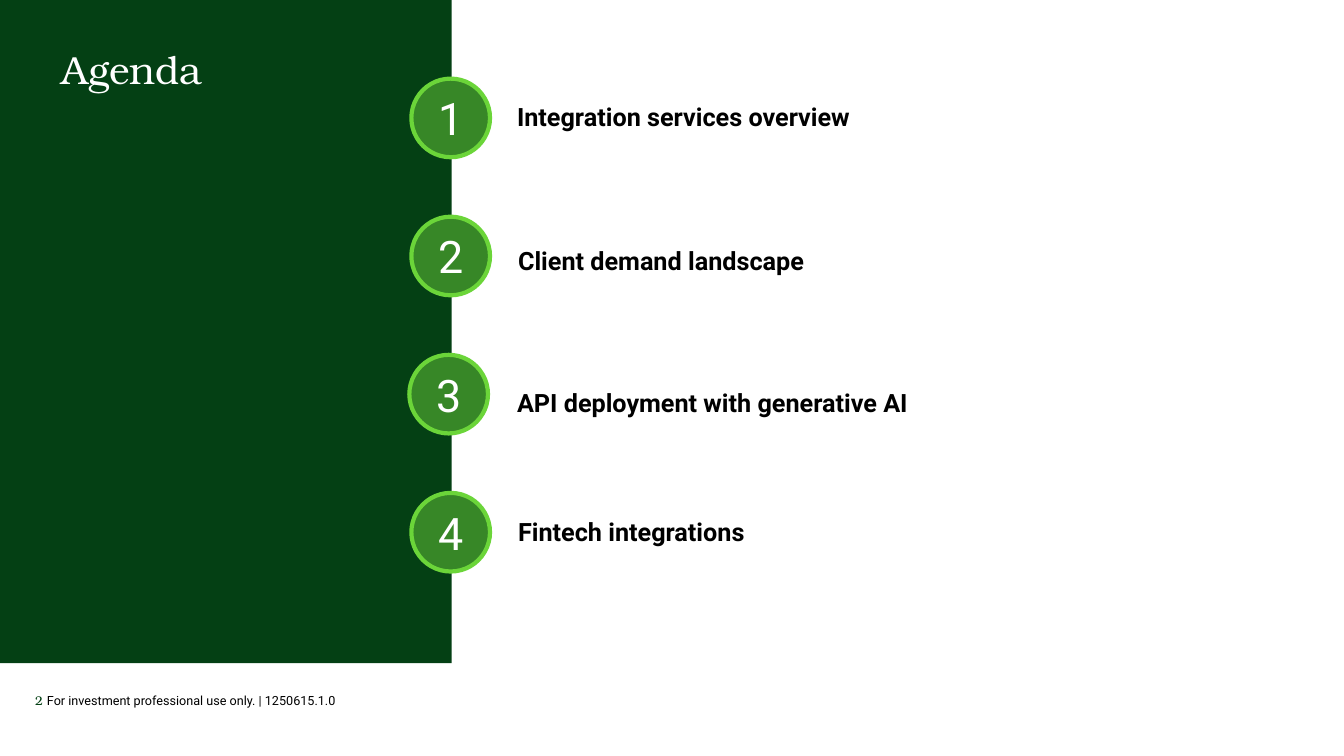
import pptx
import pptx.util
import pptx.dml.color
import pptx.enum.shapes
import pptx.enum.text

Inches = pptx.util.Inches
ALIGN = pptx.enum.text.PP_ALIGN
ANCHOR = pptx.enum.text.MSO_ANCHOR
SHAPE = pptx.enum.shapes.MSO_SHAPE

TITLE = "Agenda"
AGENDA = [
    {"topic": "Integration services overview", "circle_left": 4.08, "topic_left": 5.03, "topic_top": 0.96},
    {"topic": "Client demand landscape", "circle_left": 4.08, "topic_left": 5.04, "topic_top": 2.38},
    {"topic": "API deployment with generative AI", "circle_left": 4.06, "topic_left": 5.03, "topic_top": 3.79},
    {"topic": "Fintech integrations", "circle_left": 4.08, "topic_left": 5.04, "topic_top": 5.07},
]
PAGE_NUMBER = "2 "
DISCLAIMER = "For investment professional use only. | 1250615.1.0"

COLORS = {
    "panel": "044014",
    "circle": "378727",
    "ring": "6BD539",
    "light": "FFFFFF",
    "dark": "000000",
}
SERIF, SANS = "TeX Gyre Bonum", "Roboto"
FIRST_CIRCLE_TOP, CIRCLE_PITCH, CIRCLE_SIZE = 0.78, 1.37, 0.78


def rgb(name):
    return pptx.dml.color.RGBColor.from_string(COLORS[name])


def write(paragraph, text, *, size, font=SANS, color="dark", bold=False, align=ALIGN.LEFT):
    paragraph.alignment = align
    run = paragraph.add_run()
    run.text = text
    run.font.size = pptx.util.Pt(size)
    run.font.name = font
    run.font.bold = bold
    run.font.color.rgb = rgb(color)


def add_box(slide, left, top, width, height):
    frame = slide.shapes.add_textbox(*map(Inches, (left, top, width, height))).text_frame
    frame.word_wrap = True
    return frame


def add_filled(slide, kind, left, top, width, height, fill):
    shape = slide.shapes.add_shape(kind, *map(Inches, (left, top, width, height)))
    shape.shadow.inherit = False
    shape.fill.solid()
    shape.fill.fore_color.rgb = rgb(fill)
    shape.line.fill.background()
    return shape


def add_circle(slide, number, left, top):
    circle = add_filled(slide, SHAPE.OVAL, left, top, CIRCLE_SIZE, CIRCLE_SIZE, "circle")
    circle.line.color.rgb = rgb("ring")
    circle.line.width = pptx.util.Pt(3)
    frame = circle.text_frame
    frame.word_wrap = False
    frame.vertical_anchor = ANCHOR.MIDDLE
    frame.margin_left = frame.margin_right = Inches(0.05)
    frame.margin_top = frame.margin_bottom = Inches(0.05)
    write(frame.paragraphs[0], str(number), size=32, color="light", align=ALIGN.CENTER)


def main():
    deck = pptx.Presentation()
    deck.slide_width, deck.slide_height = Inches(13.33), Inches(7.5)
    slide = deck.slides.add_slide(deck.slide_layouts[6])

    add_filled(slide, SHAPE.RECTANGLE, 0, 0, 4.48, 6.58, "panel")
    title = add_box(slide, 0.51, 0.4, 3.56, 1.41)
    write(title.paragraphs[0], TITLE, size=28, font=SERIF, color="light")

    for index, item in enumerate(AGENDA):
        add_circle(slide, index + 1, item["circle_left"], FIRST_CIRCLE_TOP + index * CIRCLE_PITCH)
        topic = add_box(slide, item["topic_left"], item["topic_top"], 6.66, 0.4)
        write(topic.paragraphs[0], item["topic"], size=18, bold=True)

    footer = add_box(slide, 0.25, 6.9, 3.49, 0.4)
    footer.vertical_anchor = ANCHOR.MIDDLE
    footer.margin_top, footer.margin_bottom = 0, Inches(0.3)
    write(footer.paragraphs[0], PAGE_NUMBER, size=9, font=SERIF, color="panel")
    write(footer.paragraphs[0], DISCLAIMER, size=9)

    deck.save("out.pptx")


if __name__ == "__main__":
    main()
